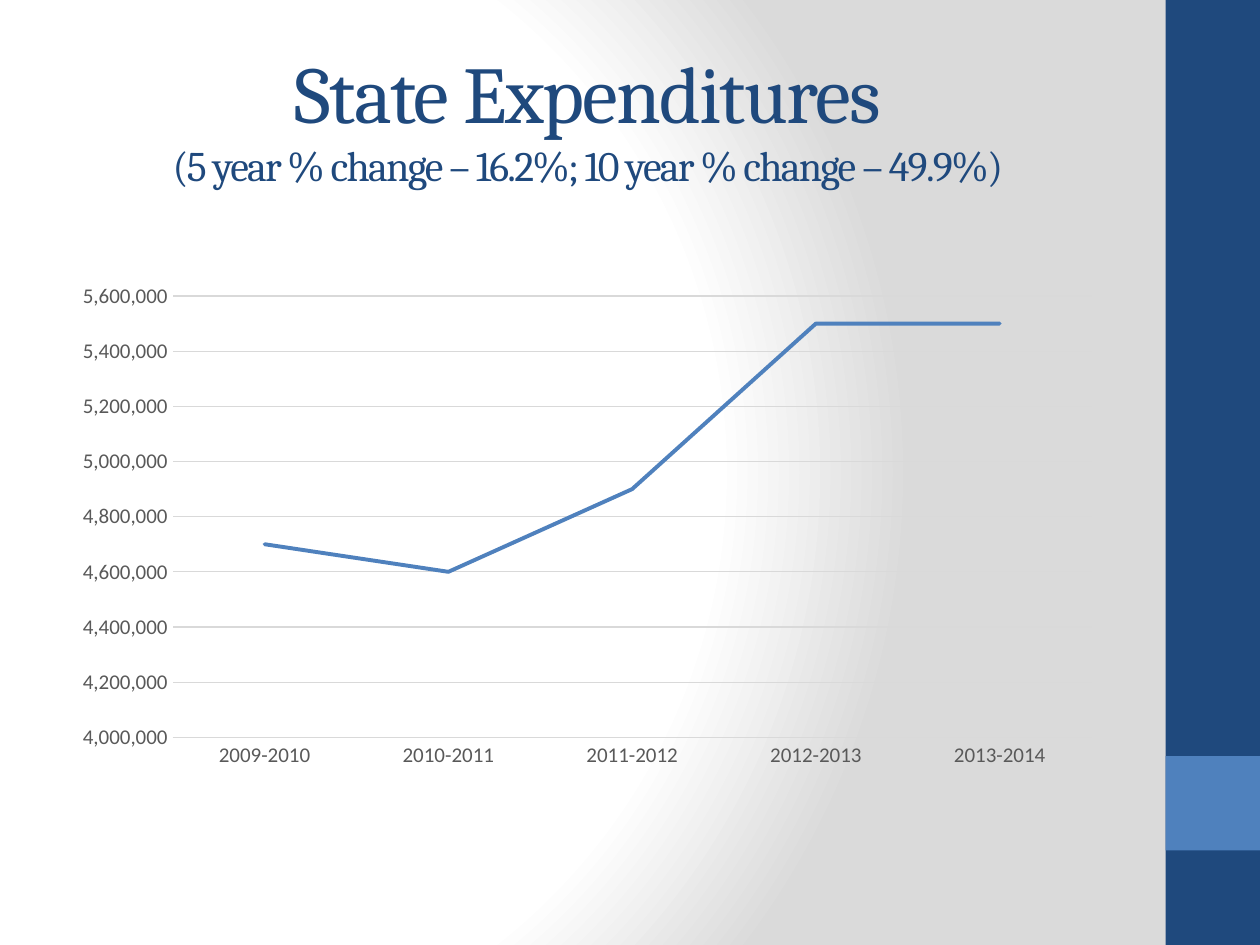
import dataclasses

import pptx
import pptx.chart.data
import pptx.dml.color
import pptx.enum.chart
import pptx.enum.shapes
import pptx.enum.text
import pptx.oxml
import pptx.oxml.ns
import pptx.util
from pptx.util import Inches


@dataclasses.dataclass(frozen=True)
class Theme:
    """Colours, fonts and type sizes of the deck."""

    navy: str = "1F497D"
    blue: str = "4F81BD"
    grid: str = "D9D9D9"
    label: str = "595959"
    backdrop: tuple = ((0, "FFFFFF"), (75, "FFFFFF"), (100, "DADADA"))
    heading_font: str = "Cambria"
    body_font: str = "Calibri"
    title_size: int = 46
    subtitle_size: int = 24
    axis_size: int = 12


THEME = Theme()
EXPENDITURES = {
    "2009-2010": 4700000,
    "2010-2011": 4600000,
    "2011-2012": 4900000,
    "2012-2013": 5500000,
    "2013-2014": 5500000,
}


def rgb(value):
    """Turn a hex string into a colour."""
    return pptx.dml.color.RGBColor.from_string(value)


def set_attributes(target, values):
    """Set each named attribute on the target."""
    for name, value in values.items():
        setattr(target, name, value)


def format_font(font, face, size, color):
    """Give a font its face, size and colour."""
    set_attributes(font, {"name": face, "size": pptx.util.Pt(size), "bold": False})
    font.color.rgb = rgb(color)


def format_line(line, color, width):
    """Give a line its colour and width."""
    line.color.rgb = rgb(color)
    line.width = pptx.util.Pt(width)


def paint_background(page):
    """Fill the page with a circular gradient centred left of the middle."""
    page.background.fill.gradient()
    gradient = page.element.find(".//" + pptx.oxml.ns.qn("a:gradFill"))
    stops = "".join(
        f'<a:gs pos="{position * 1000}"><a:srgbClr val="{color}"/></a:gs>'
        for position, color in THEME.backdrop
    )
    circle = pptx.oxml.parse_xml(
        f'<a:gradFill {pptx.oxml.ns.nsdecls("a")} rotWithShape="1"><a:gsLst>{stops}</a:gsLst>'
        '<a:path path="circle"><a:fillToRect l="20000" t="50000" r="100000" b="50000"/>'
        "</a:path></a:gradFill>"
    )
    gradient.getparent().replace(gradient, circle)


def add_side_band(page, left, top, width, height):
    """Draw the navy band with its square blue accent."""
    accent_top = top + height - 2 * width
    for color, y, tall in ((THEME.navy, top, height), (THEME.blue, accent_top, width)):
        band = page.shapes.add_shape(
            pptx.enum.shapes.MSO_SHAPE.RECTANGLE, left, y, width, tall
        )
        band.shadow.inherit = False
        band.fill.solid()
        band.fill.fore_color.rgb = rgb(color)
        band.line.fill.background()


def add_title(page, left, top, width, height):
    """Place the title and its smaller second line."""
    box = page.shapes.title
    set_attributes(box, {"left": left, "top": top, "width": width, "height": height})
    set_attributes(box.text_frame, {
        "word_wrap": True,
        "auto_size": pptx.enum.text.MSO_AUTO_SIZE.NONE,
        "vertical_anchor": pptx.enum.text.MSO_ANCHOR.MIDDLE,
    })
    para = box.text_frame.paragraphs[0]
    set_attributes(para, {
        "alignment": pptx.enum.text.PP_ALIGN.CENTER,
        "space_before": pptx.util.Pt(0),
    })
    lines = (
        ("State Expenditures", THEME.title_size),
        ("(5 year % change – 16.2%; 10 year % change – 49.9%)", THEME.subtitle_size),
    )
    for index, (text, size) in enumerate(lines):
        if index:
            para.add_line_break()
        span = para.add_run()
        span.text = text
        format_font(span.font, THEME.heading_font, size, THEME.navy)
        span.font._element.set("spc", "-100")


def add_expenditure_chart(page, left, top, width, height):
    """Chart the yearly expenditures as one line."""
    data = pptx.chart.data.CategoryChartData(number_format="#,##0")
    data.categories = list(EXPENDITURES)
    data.add_series("Series 1", list(EXPENDITURES.values()))
    chart = page.shapes.add_chart(
        pptx.enum.chart.XL_CHART_TYPE.LINE, left, top, width, height, data
    ).chart
    set_attributes(chart, {"has_legend": False, "has_title": False})
    format_font(chart.font, THEME.body_font, THEME.axis_size, THEME.label)

    years, amounts = chart.category_axis, chart.value_axis
    for axis in (years, amounts):
        set_attributes(axis, {
            "major_tick_mark": pptx.enum.chart.XL_TICK_MARK.NONE,
            "minor_tick_mark": pptx.enum.chart.XL_TICK_MARK.NONE,
        })
        format_font(axis.tick_labels.font, THEME.body_font, THEME.axis_size, THEME.label)
    format_line(years.format.line, THEME.grid, 0.75)
    set_attributes(amounts, {
        "minimum_scale": 4000000,
        "maximum_scale": 5600000,
        "major_unit": 200000,
        "has_major_gridlines": True,
    })
    set_attributes(amounts.tick_labels, {
        "number_format": "#,##0",
        "number_format_is_linked": False,
    })
    amounts.format.line.fill.background()
    format_line(amounts.major_gridlines.format.line, THEME.grid, 0.75)

    plot = chart.plots[0]
    plot.vary_by_categories = False
    series = plot.series[0]
    series.smooth = False
    series.marker.style = pptx.enum.chart.XL_MARKER_STYLE.NONE
    format_line(series.format.line, THEME.blue, 2.25)
    series.format.line._get_or_add_ln().set("cap", "rnd")


def main():
    """Build and save the deck."""
    deck = pptx.Presentation()
    set_attributes(deck, {"slide_width": Inches(10), "slide_height": Inches(7.5)})
    page = deck.slides.add_slide(deck.slide_layouts.get_by_name("Title Only"))
    paint_background(page)
    add_side_band(page, Inches(9.25), Inches(0), Inches(0.75), Inches(7.5))
    add_title(page, Inches(0.5), Inches(0.3), Inches(8.33), Inches(1.25))
    add_expenditure_chart(page, Inches(0.49), Inches(2.17), Inches(8.34), Inches(4))
    deck.save("out.pptx")


if __name__ == "__main__":
    main()
